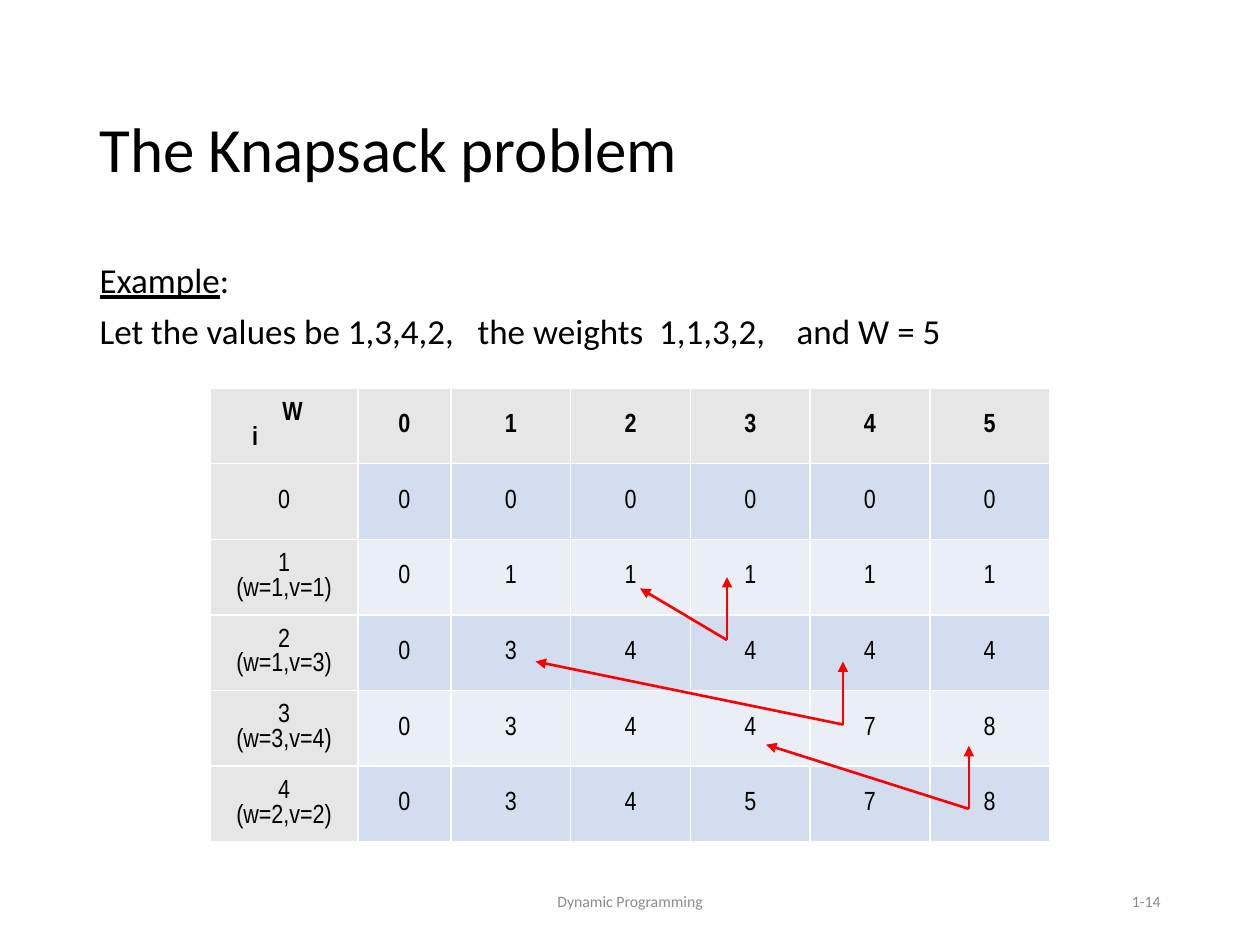
from dataclasses import dataclass

from lxml.etree import SubElement
from pptx import Presentation
from pptx.dml.color import RGBColor
from pptx.enum.shapes import MSO_CONNECTOR
from pptx.enum.text import MSO_ANCHOR, MSO_AUTO_SIZE, PP_ALIGN
from pptx.oxml.ns import qn
from pptx.util import Inches, Pt


@dataclass(frozen=True)
class Theme:
    font: str = "Calibri"
    table_font: str = "Arial Narrow"
    ink: str = "000000"
    muted: str = "8C8C8C"
    header: str = "E7E6E6"
    bands: tuple = ("D2DEEF", "EAEFF7")
    arrow: str = "FF0000"
    title_size: int = 36
    body_size: int = 20
    cell_size: int = 15
    footer_size: int = 9


T = Theme()
WIDTH, HEIGHT = 10, 7.5
MARGIN = 0.69
CONTENT_W = WIDTH - 2 * MARGIN

TITLE = "The Knapsack problem"
BODY = [
    [("Example", True), (":", False)],
    [("Let the values be 1,3,4,2,   the weights  1,1,3,2,    and W = 5", False)],
]
CAPACITIES = ["0", "1", "2", "3", "4", "5"]
ITEMS = [  # row label, best value for each capacity
    (["0"], [0, 0, 0, 0, 0, 0]),
    (["1", "(w=1,v=1)"], [0, 1, 1, 1, 1, 1]),
    (["2", "(w=1,v=3)"], [0, 3, 4, 4, 4, 4]),
    (["3", "(w=3,v=4)"], [0, 3, 4, 4, 7, 8]),
    (["4", "(w=2,v=2)"], [0, 3, 4, 5, 7, 8]),
]
CORNER = [("W", 0.47), ("i", 0.23)]  # axis name, indent
TABLE_LEFT, TABLE_TOP, ROW_H = 1.67, 3.08, 0.6
COL_WIDTHS = [1.17, 0.74] + [0.95] * 5
CHOICES = [  # cell being filled, then the "take the item" source
    ((6.69, 5.75), (4.25, 5.25)),
    ((5.77, 5.08), (5.08, 4.67)),
    ((7.69, 6.42), (6.08, 5.91)),
]
SKIP_RISE = 0.5  # the "skip the item" source lies straight above
FOOTER_TOP, FOOTER_H = 6.95, 0.4
FOOTERS = [
    ("Dynamic Programming", 3.31, 3.38, PP_ALIGN.CENTER),
    ("1-14", 7.06, 2.25, PP_ALIGN.RIGHT),
]


def rgb(color):
    return RGBColor.from_string(color)


def add_run(p, text, size, font=T.font, color=T.ink, bold=False, underline=False):
    r = p.add_run()
    r.text = text
    f = r.font
    f.name, f.size, f.bold, f.underline = font, Pt(size), bold, underline
    f.color.rgb = rgb(color)


def place(sp, left, top, width, height):
    sp.left, sp.top = Inches(left), Inches(top)
    sp.width, sp.height = Inches(width), Inches(height)


def paragraphs(tf, count):
    return [tf.paragraphs[0]] + [tf.add_paragraph() for _ in range(count - 1)]


def fill_title(sp):
    place(sp, MARGIN, 0.4, CONTENT_W, 1.45)
    tf = sp.text_frame
    tf.auto_size = MSO_AUTO_SIZE.NONE
    tf.vertical_anchor = MSO_ANCHOR.MIDDLE
    p = tf.paragraphs[0]
    p.alignment, p.line_spacing, p.space_before = PP_ALIGN.LEFT, 1.15, Pt(6)
    add_run(p, TITLE, T.title_size)


def fill_body(sp):
    place(sp, MARGIN, 2.04, CONTENT_W, 4.76)
    tf = sp.text_frame
    tf.auto_size = MSO_AUTO_SIZE.NONE
    for p, runs in zip(paragraphs(tf, len(BODY)), BODY):
        p.line_spacing, p.space_before = 0.9, Pt(7.5)
        pPr = p._p.get_or_add_pPr()
        pPr.set("marL", "0")
        pPr.set("indent", "0")
        SubElement(pPr, qn("a:buNone"))
        for text, underline in runs:
            add_run(p, text, T.body_size, underline=underline)


def fill_cell(cell, lines, color, bold=False):
    cell.fill.solid()
    cell.fill.fore_color.rgb = rgb(color)
    cell.vertical_anchor = MSO_ANCHOR.MIDDLE
    for p, text in zip(paragraphs(cell.text_frame, len(lines)), lines):
        p.alignment = PP_ALIGN.CENTER
        add_run(p, text, T.cell_size, T.table_font, bold=bold)


def add_value_table(s):
    rows = len(ITEMS) + 1
    table = s.shapes.add_table(
        rows, len(COL_WIDTHS), Inches(TABLE_LEFT), Inches(TABLE_TOP),
        Inches(sum(COL_WIDTHS)), Inches(rows * ROW_H)).table
    for column, width in zip(table.columns, COL_WIDTHS):
        column.width = Inches(width)

    corner = table.cell(0, 0)
    fill_cell(corner, [name for name, _ in CORNER], T.header, bold=True)
    for p, (_, indent) in zip(corner.text_frame.paragraphs, CORNER):
        p.alignment = PP_ALIGN.LEFT
        p._p.get_or_add_pPr().set("marL", str(Inches(indent)))

    for c, capacity in enumerate(CAPACITIES, 1):
        fill_cell(table.cell(0, c), [capacity], T.header, bold=True)
    for r, (label, values) in enumerate(ITEMS, 1):
        fill_cell(table.cell(r, 0), label, T.header)
        for c, value in enumerate(values, 1):
            fill_cell(table.cell(r, c), [str(value)], T.bands[(r - 1) % 2])


def add_arrow(s, start, end):
    line = s.shapes.add_connector(
        MSO_CONNECTOR.STRAIGHT, *(Inches(v) for v in (*start, *end)))
    line.line.color.rgb = rgb(T.arrow)
    line.line.width = Pt(1.5)
    SubElement(line.line._get_or_add_ln(), qn("a:tailEnd"), type="triangle")
    SubElement(line._element.spPr, qn("a:effectLst"))


def add_footer(s, text, left, width, align):
    tf = s.shapes.add_textbox(Inches(left), Inches(FOOTER_TOP),
                              Inches(width), Inches(FOOTER_H)).text_frame
    tf.word_wrap = True
    tf.vertical_anchor = MSO_ANCHOR.MIDDLE
    p = tf.paragraphs[0]
    p.alignment = align
    add_run(p, text, T.footer_size, color=T.muted)


def main():
    prs = Presentation()
    prs.slide_width, prs.slide_height = Inches(WIDTH), Inches(HEIGHT)
    s = prs.slides.add_slide(prs.slide_layouts[1])
    fill_title(s.shapes.title)
    for footer in FOOTERS:
        add_footer(s, *footer)
    fill_body(s.placeholders[1])
    add_value_table(s)
    for (x, y), take in CHOICES:
        add_arrow(s, (x, y), take)
        add_arrow(s, (x, y), (x, y - SKIP_RISE))
    prs.save("out.pptx")


if __name__ == "__main__":
    main()
